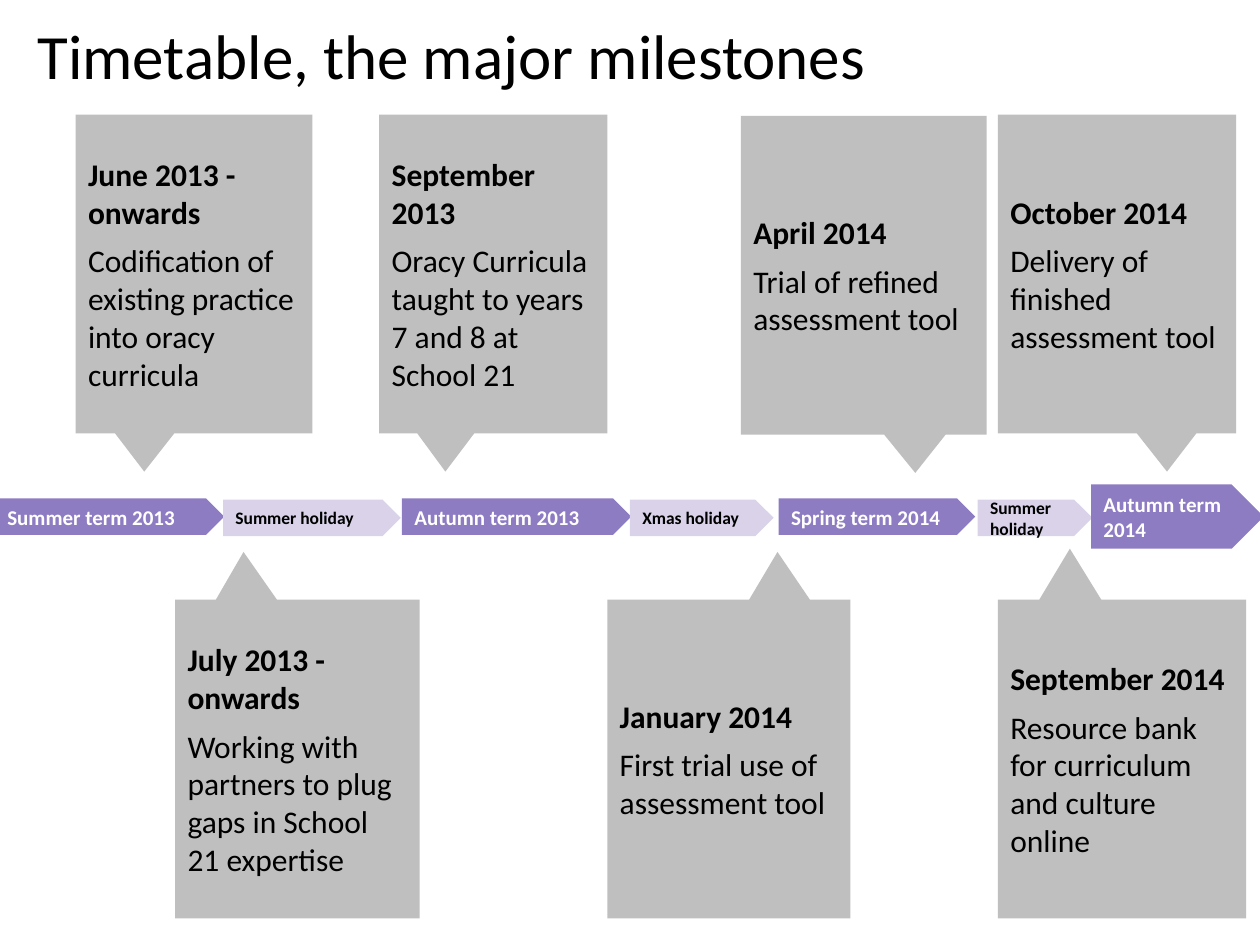
from pptx import Presentation
from pptx import util as u
from pptx.dml.color import RGBColor
from pptx.enum import shapes, text

COLOURS = {
    "ink": "000000",
    "paper": "FFFFFF",
    "milestone": "BFBFBF",
    "term": "8E7CC3",
    "holiday": "D9D2E9",
}


class TimetableSlide:
    """Holds the slide and the shared style."""

    font = "Calibri"
    inset = u.Inches(0.1)

    def __init__(self, slide):
        self.slide = slide

    def colour(self, name):
        return RGBColor.from_string(COLOURS[name])

    def label(self, shape, lines, anchor, space=0):
        """Each line is (wording, size, bold, colour name)."""
        frame = shape.text_frame
        frame.word_wrap = True
        frame.vertical_anchor = anchor
        frame.margin_left = frame.margin_right = self.inset
        frame.margin_top = frame.margin_bottom = self.inset
        frame.text = "\n".join(line[0] for line in lines)
        for paragraph, (_, size, bold, ink) in zip(frame.paragraphs, lines):
            paragraph.alignment = text.PP_ALIGN.LEFT
            paragraph.space_before = u.Pt(space)
            font = paragraph.runs[0].font
            font.name, font.size, font.bold = self.font, u.Pt(size), bold
            font.color.rgb = self.colour(ink)

    def block(self, kind, box, fill):
        shape = self.slide.shapes.add_shape(kind, *map(u.Inches, box))
        shape.shadow.inherit = False
        shape.fill.solid()
        shape.fill.fore_color.rgb = self.colour(fill)
        shape.line.fill.background()
        return shape

    def title(self, wording, box):
        heading = self.slide.shapes.add_textbox(*map(u.Inches, box))
        self.label(heading, [(wording, 36, False, "ink")],
                   text.MSO_ANCHOR.BOTTOM)

    def milestone(self, date, event, left, top, width, pointer):
        callout = self.block(shapes.MSO_SHAPE.RECTANGULAR_CALLOUT,
                             (left, top, width, 2.53), "milestone")
        callout.adjustments[0], callout.adjustments[1] = pointer
        self.label(callout,
                   [(date, 18, True, "ink"), (event, 18, False, "ink")],
                   text.MSO_ANCHOR.MIDDLE, space=6)

    def period(self, name, kind, left, width, height=0.29):
        size, ink, middle = {"term": (12, "paper", 4.1),
                             "holiday": (10, "ink", 4.11)}[kind]
        arrow = self.block(shapes.MSO_SHAPE.PENTAGON,
                           (left, middle - height / 2, width, height), kind)
        self.label(arrow, [(name, size, True, ink)], text.MSO_ANCHOR.MIDDLE)


def main():
    deck = Presentation()
    deck.slide_width, deck.slide_height = u.Inches(10), u.Inches(7.5)
    timetable = TimetableSlide(deck.slides.add_slide(deck.slide_layouts[6]))

    timetable.title("Timetable, the major milestones", (0.2, -0.2, 10.89, 1.03))

    # Milestones above and below the timeline
    above, below = 0.91, 4.76
    milestones = [
        ("June 2013 - onwards",
         "Codification of existing practice into oracy curricula",
         0.6, above, 1.88, (-0.21, 0.62)),
        ("July 2013 - onwards",
         "Working with partners to plug gaps in School 21 expertise",
         1.39, below, 1.94, (-0.22, -0.65)),
        ("September 2013",
         "Oracy Curricula taught to years 7 and 8 at School 21",
         3.01, above, 1.81, (-0.21, 0.62)),
        ("January 2014", "First trial use of assessment tool",
         4.82, below, 1.93, (0.2, -0.65)),
        ("September 2014", "Resource bank for curriculum and culture online",
         7.92, below, 1.97, (-0.21, -0.66)),
        ("October 2014", "Delivery of finished assessment tool",
         7.92, above, 1.89, (0.21, 0.62)),
        ("April 2014", "Trial of refined assessment tool",
         5.88, above + 0.01, 1.95, (0.21, 0.62)),
    ]
    for milestone in milestones:
        timetable.milestone(*milestone)

    # Timeline of terms and holidays
    periods = [
        ("Summer term 2013", "term", -0.04, 1.82),
        ("Autumn term 2013", "term", 3.19, 1.82),
        ("Summer holiday", "holiday", 1.77, 1.41),
        ("Xmas holiday", "holiday", 5, 1.14),
        ("Spring term 2014", "term", 6.18, 1.56),
        ("Summer holiday", "holiday", 7.76, 0.91),
        ("Autumn term 2014", "term", 8.66, 1.37, 0.51),
    ]
    for period in periods:
        timetable.period(*period)

    deck.save("out.pptx")


if __name__ == "__main__":
    main()
